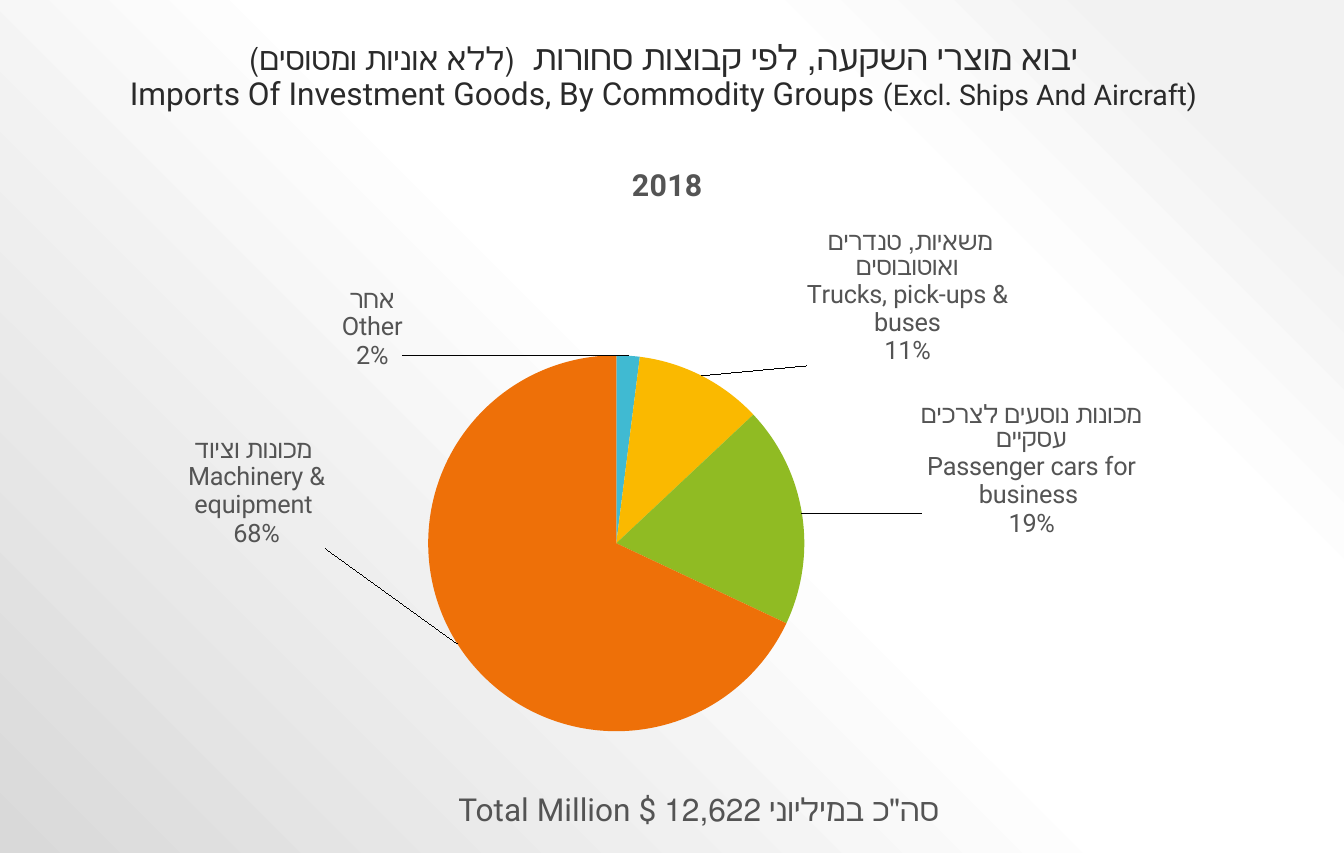
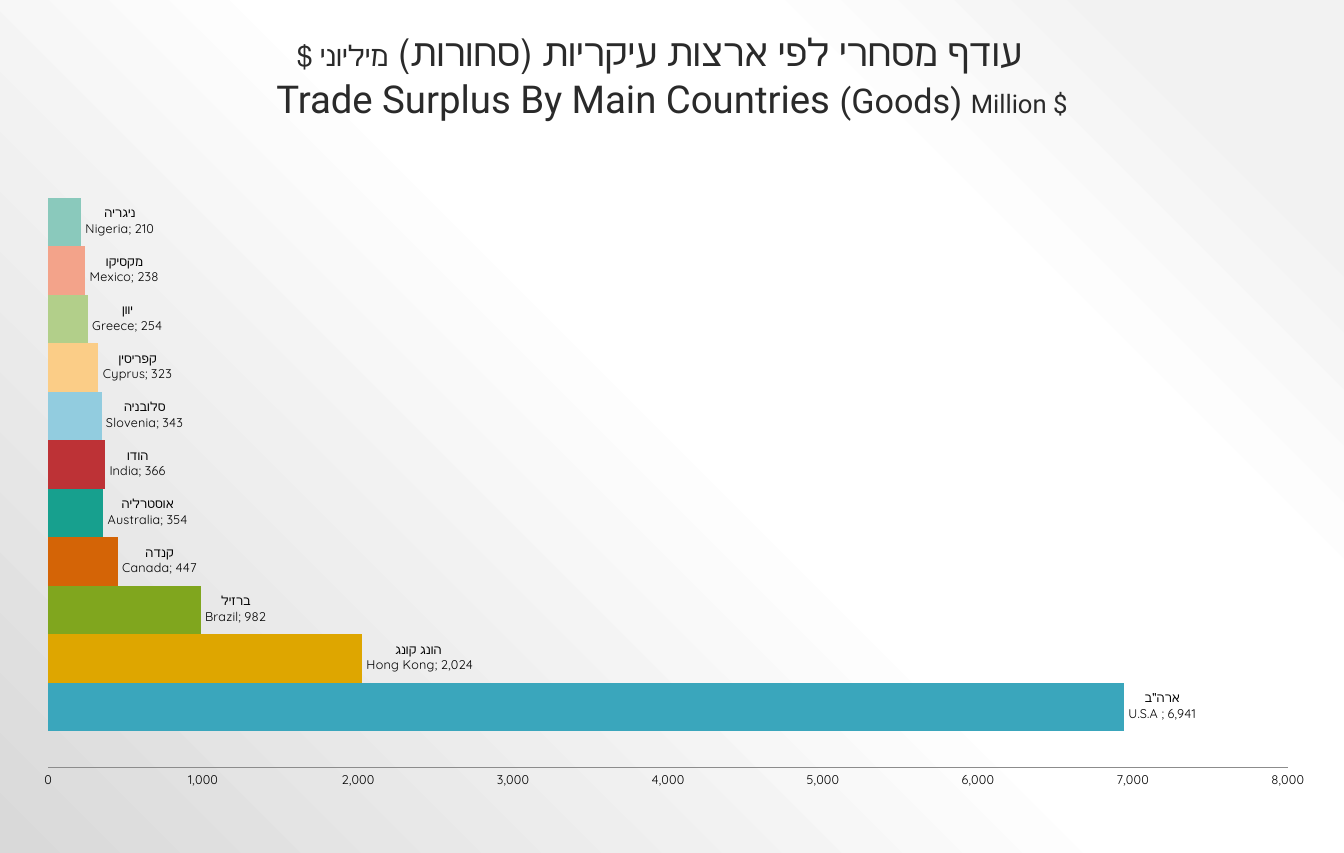
import pptx
import pptx.chart.data
import pptx.dml.color
import pptx.enum.chart
import pptx.enum.text
import pptx.oxml
import pptx.oxml.ns
import pptx.util

Inches = pptx.util.Inches
Pt = pptx.util.Pt

MILLIMETRES_PER_INCH = 25.4
COLORS = {
    "title": "2A2A2A", "body": "545454", "black": "000000", "axis": "8C8C8C",
    "blue": "40BAD2", "yellow": "FAB900", "green": "90BB23", "orange": "EE7008",
    "dark blue": "3AA6BC", "dark yellow": "DEA600", "dark green": "80A61E",
    "dark orange": "D46406", "dark teal": "17A08E", "dark red": "BD3236",
    "light blue": "92CCDF", "light yellow": "FBCD87", "light green": "B2CF8A",
    "light orange": "F3A38A", "light teal": "8AC9BC",
}
BACKGROUND_STOPS = [(10, "F2F2F2"), (28, "FFFFFF"), (48, "FFFFFF"), (100, "D9D9D9")]
TEXT_FONT = "Roboto"
BAR_FONT = "Quicksand"

PIE_SLICES = [
    ("אחר\nOther", 2, "blue", {"offset": (-19.8, 3.2), "size": (7, 12)}),
    (" משאיות, טנדרים ואוטובוסים\nTrucks, pick-ups & buses", 11, "yellow",
     {"offset": (7.9, -0.6), "size": (17, 20)}),
    ("מכונות נוסעים לצרכים עסקיים\nPassenger cars for business ", 19, "green",
     {"offset": (8.7, 3.8), "size": (18, 20)}),
    ("מכונות וציוד \nMachinery & equipment ", 68, "orange",
     {"offset": (-9.8, -31.6), "size": (12, 17)}),
]
COUNTRIES = [
    ('ארה"ב\nU.S.A ', 6941, "dark blue"),
    ("הונג קונג \nHong Kong", 2024, "dark yellow"),
    ("ברזיל\nBrazil", 982, "dark green"),
    ("קנדה\nCanada", 447, "dark orange"),
    ("אוסטרליה\nAustralia", 354, "dark teal"),
    ("הודו\nIndia", 366, "dark red"),
    ("סלובניה\nSlovenia", 343, "light blue"),
    ("קפריסין\nCyprus", 323, "light yellow"),
    ("יוון\nGreece", 254, "light green"),
    ("מקסיקו\nMexico", 238, "light orange"),
    ("ניגריה\nNigeria", 210, "light teal"),
]


def rgb(name):
    """Return a named colour."""
    return pptx.dml.color.RGBColor.from_string(COLORS[name])


def style_font(font, size, color, name=TEXT_FONT):
    """Set size, colour and typeface of a font."""
    font.size = Pt(size)
    font.color.rgb = rgb(color)
    font.name = name


def set_background(master):
    """Give every slide the shared grey gradient."""
    master.background.fill.gradient()
    stops = "".join(
        f'<a:gs pos="{position * 1000}"><a:srgbClr val="{color}"/></a:gs>'
        for position, color in BACKGROUND_STOPS)
    gradient = pptx.oxml.parse_xml(
        f'<a:gradFill {pptx.oxml.ns.nsdecls("a")} rotWithShape="1"><a:gsLst>{stops}</a:gsLst>'
        '<a:path path="circle"><a:fillToRect l="100000" b="100000"/></a:path>'
        '<a:tileRect t="-100000" r="-100000"/></a:gradFill>')
    current = master.element.find(".//" + pptx.oxml.ns.qn("a:gradFill"))
    current.getparent().replace(current, gradient)


def add_text(slide, box, lines, color="title", bottom=False, rtl=False, spacing=0.9):
    """Place one centred paragraph whose lines are lists of (text, size) runs."""
    shape = slide.shapes.add_textbox(*map(Inches, box))
    frame = shape.text_frame
    frame.word_wrap = True
    if bottom:
        frame.vertical_anchor = pptx.enum.text.MSO_ANCHOR.BOTTOM
    paragraph = frame.paragraphs[0]
    paragraph.alignment = pptx.enum.text.PP_ALIGN.CENTER
    paragraph.line_spacing = spacing
    if rtl:
        paragraph._p.get_or_add_pPr().set("rtl", "1")
    for index, runs in enumerate(lines):
        if index:
            paragraph.add_line_break()
        for text, size in runs:
            run = paragraph.add_run()
            run.text = text
            style_font(run.font, size, color)


def layout_values(keys, percents):
    """Write percentages of the chart box as layout elements."""
    return "".join(f'<c:{key} val="{percent / 100:.3f}"/>'
                   for key, percent in zip(keys, percents))


def add_chart(slide, box, kind, data, plot_box, size, font_name):
    """Add a chart without legend whose plot fills the given percentages."""
    frame = slide.shapes.add_chart(kind, *map(Inches, box), data)
    chart = frame.chart
    chart.has_legend = False
    chart.has_title = False
    style_font(chart.font, size, "body", font_name)
    plot_area = chart.element.find(".//" + pptx.oxml.ns.qn("c:plotArea"))
    for layout in plot_area.findall(pptx.oxml.ns.qn("c:layout")):
        plot_area.remove(layout)
    plot_area.insert(0, pptx.oxml.parse_xml(
        f'<c:layout {pptx.oxml.ns.nsdecls("c")}><c:manualLayout><c:layoutTarget val="inner"/>'
        '<c:xMode val="edge"/><c:yMode val="edge"/>'
        f'{layout_values("xywh", plot_box)}</c:manualLayout></c:layout>'))
    return chart


def format_labels(labels, number_format, size, color, font_name):
    """Set number format and font of data or tick labels."""
    labels.number_format = number_format
    labels.number_format_is_linked = False
    style_font(labels.font, size, color, font_name)


def slice_label(index, offset, size):
    """Build a moved pie label that shows category and percentage."""
    return pptx.oxml.parse_xml(
        f'<c:dLbl {pptx.oxml.ns.nsdecls("c")}><c:idx val="{index}"/><c:layout><c:manualLayout>'
        f'{layout_values("xy", offset)}</c:manualLayout></c:layout>'
        '<c:dLblPos val="outEnd"/><c:showLegendKey val="0"/><c:showVal val="0"/>'
        '<c:showCatName val="1"/><c:showSerName val="0"/><c:showPercent val="1"/>'
        '<c:showBubbleSize val="0"/><c:separator>\n</c:separator>'
        '<c:extLst><c:ext uri="{CE6537A1-D6FC-4f65-9D91-7224C49458BB}" '
        'xmlns:c15="http://schemas.microsoft.com/office/drawing/2012/chart">'
        f'<c15:layout><c:manualLayout>{layout_values("wh", size)}'
        '</c:manualLayout></c15:layout></c:ext></c:extLst></c:dLbl>')


def add_pie(slide, box):
    """Place the pie of commodity groups."""
    data = pptx.chart.data.CategoryChartData()
    data.categories = [entry[0] for entry in PIE_SLICES]
    data.add_series("Series 1", [entry[1] for entry in PIE_SLICES])
    chart = add_chart(slide, box, pptx.enum.chart.XL_CHART_TYPE.PIE, data,
                      (31.5, 32.5, 29.1, 56.7), 16, TEXT_FONT)
    chart.has_title = True
    run = chart.chart_title.text_frame.paragraphs[0].add_run()
    run.text = "2018"
    run.font.bold = True
    style_font(run.font, 19.2, "body")
    series = chart.plots[0].series[0]
    labels = series.data_labels
    format_labels(labels, "0%", 16, "body", TEXT_FONT)
    labels.show_percentage = True
    labels.show_category_name = True
    labels.show_value = False
    label_list = chart.element.find(".//" + pptx.oxml.ns.qn("c:dLbls"))
    for index, (_, _, color, label) in enumerate(PIE_SLICES):
        fill = series.points[index].format.fill
        fill.solid()
        fill.fore_color.rgb = rgb(color)
        label_list.insert(index, slice_label(index, **label))


def add_country_bars(slide, box):
    """Place the bar chart with one series for each country."""
    data = pptx.chart.data.CategoryChartData()
    data.categories = ["1"]
    for name, value, _ in COUNTRIES:
        data.add_series(name, [value])
    chart = add_chart(slide, box, pptx.enum.chart.XL_CHART_TYPE.BAR_CLUSTERED, data,
                      (2.3, 1.9, 94.4, 92.7), 8, BAR_FONT)
    plot = chart.plots[0]
    plot.vary_by_categories = False
    plot.gap_width = 150
    plot.overlap = 0
    chart.category_axis.visible = False
    axis = chart.value_axis
    axis.has_major_gridlines = False
    axis.minimum_scale = 0
    axis.maximum_scale = 8000
    axis.major_unit = 1000
    axis.major_tick_mark = pptx.enum.chart.XL_TICK_MARK.NONE
    format_labels(axis.tick_labels, "#,##0", 8, "black", BAR_FONT)
    axis.format.line.color.rgb = rgb("axis")
    axis.format.line.width = Pt(0.5)
    for series, (_, _, color) in zip(plot.series, COUNTRIES):
        series.format.fill.solid()
        series.format.fill.fore_color.rgb = rgb(color)
        labels = series.data_labels
        format_labels(labels, "#,##0", 8, "black", BAR_FONT)
        labels.show_value = True
        labels.show_series_name = True
        labels.position = pptx.enum.chart.XL_LABEL_POSITION.OUTSIDE_END
    for flag in chart.element.iter(pptx.oxml.ns.qn("c:showBubbleSize")):
        flag.addnext(pptx.oxml.parse_xml(
            f'<c:separator {pptx.oxml.ns.nsdecls("c")}>; </c:separator>'))


def build_imports_slide(slide):
    """Fill the slide on imports of investment goods."""
    add_pie(slide, (0.18, 1.23, 11.37, 5.83))
    add_text(slide, (0.08, 0.21, 11.5, 0.83), [
        [("יבוא מוצרי השקעה, לפי קבוצות סחורות  ", 22), ("(ללא אוניות ומטוסים)", 20)],
        [("Imports Of Investment Goods, By Commodity Groups ", 20),
         ("(Excl. Ships And Aircraft)", 18)],
    ], bottom=True, rtl=True)
    add_text(slide, (3.62, 6.9, 5.04, 0.44),
             [[('Total Million $ סה"כ במיליוני 12,622', 20)]], color="body", spacing=1.0)


def build_surplus_slide(slide):
    """Fill the slide on trade surplus by country."""
    add_text(slide, (1.18, 0.6, 9.45, 0.52), [
        [("Trade Surplus By Main Countries ", 24.3), ("(Goods) ", 21.6), ("Million $", 16.2)],
    ], bottom=True)
    add_country_bars(slide, (0.16, 1.31, 11.54, 5.75))
    add_text(slide, (1.07, 0.25, 9.45, 0.46), [
        [("עודף מסחרי לפי ארצות עיקריות (סחורות) ", 24), ("מיליוני $", 18)],
    ], rtl=True)


def main():
    """Build and save the presentation."""
    presentation = pptx.Presentation()
    presentation.slide_width = Inches(300 / MILLIMETRES_PER_INCH)
    presentation.slide_height = Inches(7.5)
    set_background(presentation.slide_master)
    for build in (build_imports_slide, build_surplus_slide):
        build(presentation.slides.add_slide(presentation.slide_layouts[6]))
    presentation.save("out.pptx")


if __name__ == "__main__":
    main()
